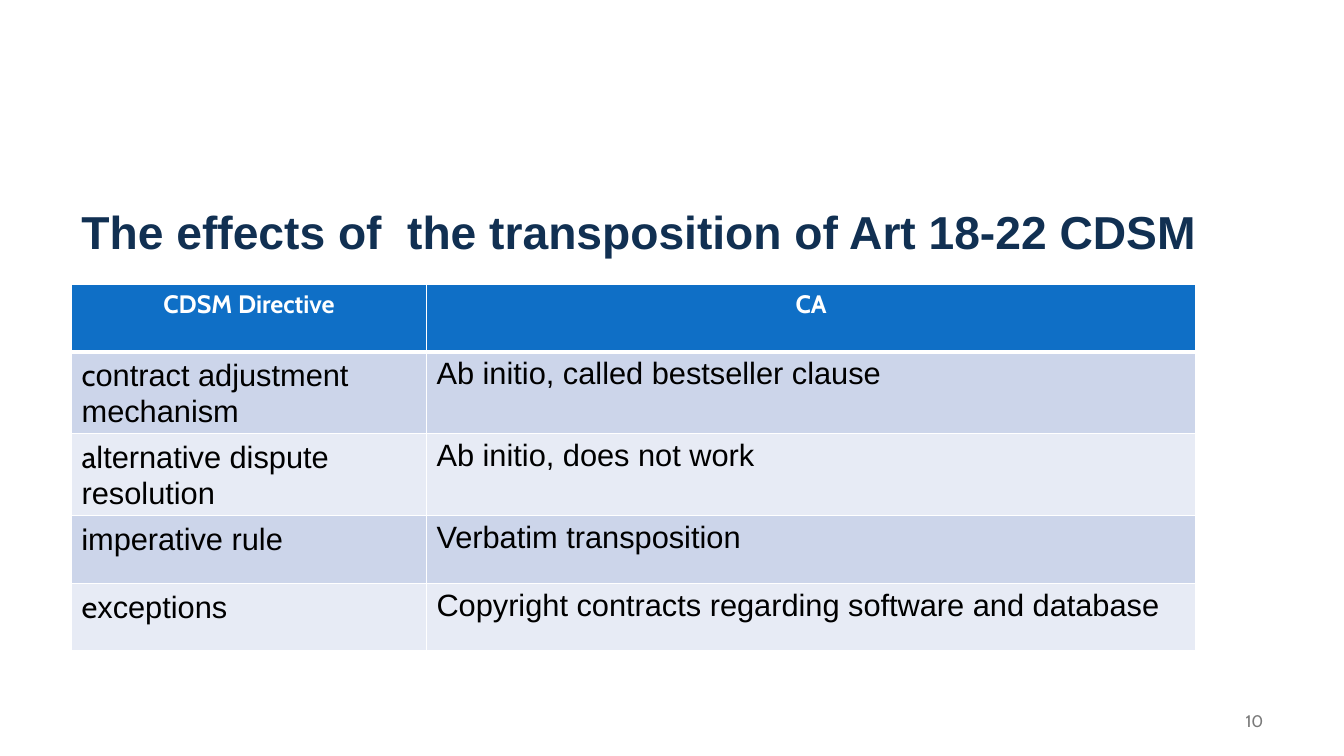
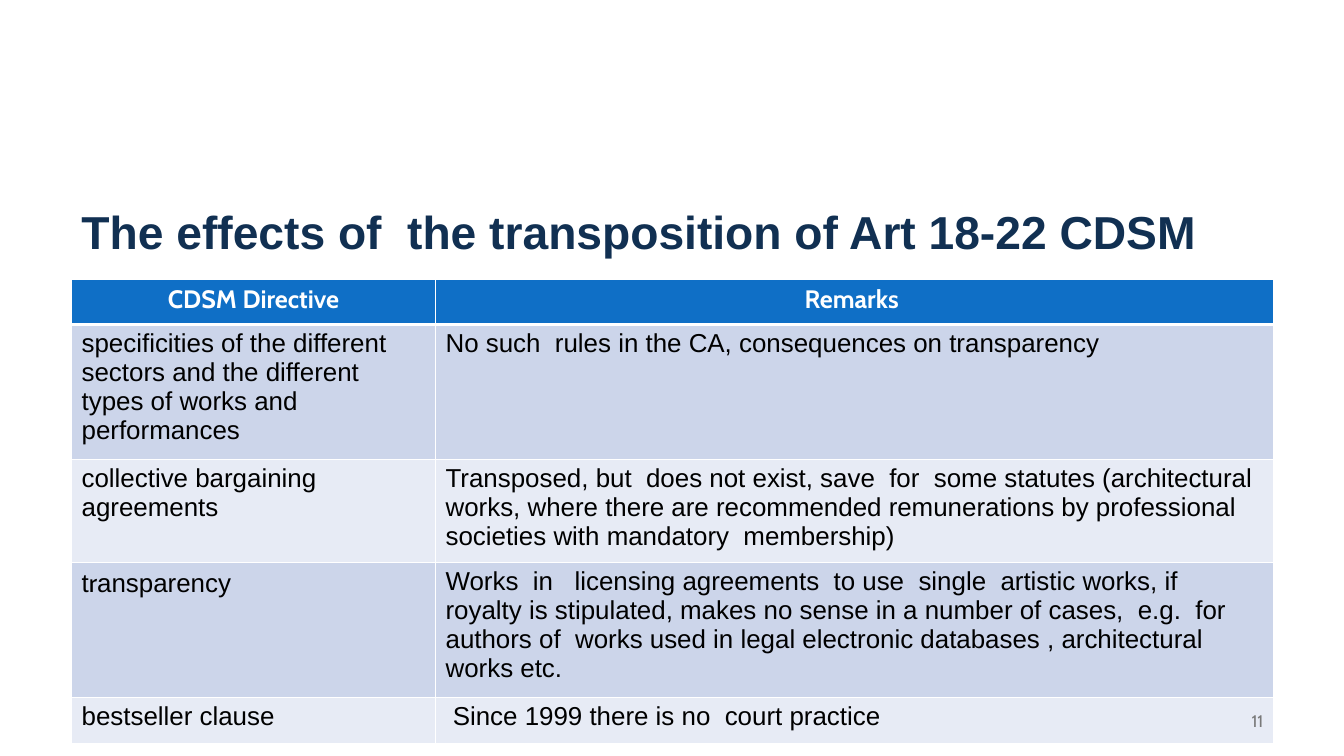
from dataclasses import dataclass

from lxml.etree import SubElement
from pptx import Presentation
from pptx.dml.color import RGBColor
from pptx.enum.text import MSO_ANCHOR, PP_ALIGN
from pptx.oxml.ns import qn
from pptx.util import Inches, Pt

# Shared look
NAVY, BLUE, GREY = "113052", "0F6FC6", "797979"
WHITE, BLACK = "FFFFFF", "000000"
BANDS = ("CCD5EA", "E7EBF5")
BODY_FONT, ACCENT_FONT = "Arial", "Cabin"
LEFT = 0.71
TITLE = "The effects of  the transposition of Art 18-22 CDSM"

TITLE_FORMAT = {"name": BODY_FONT, "size": Pt(33), "bold": True}
HEADER_FORMAT = {"name": ACCENT_FONT, "size": Pt(18), "bold": True}
NUMBER_FORMAT = {"name": ACCENT_FONT, "size": Pt(12), "bold": False}


@dataclass(frozen=True)
class ComparisonSlide:
    number: int
    top: float
    column_widths: tuple[float, ...]
    row_heights: tuple[float, ...]
    body_size: float
    rows: tuple[tuple[str, str], ...]  # text between bars is in the accent font


SLIDES = (
    ComparisonSlide(
        10, 2.82, (3.52, 7.63), (0.67, 0.7, 0.67, 0.67, 0.67), 22,
        (
            ("CDSM Directive", "CA"),
            ("|c|ontract adjustment mechanism",
             "Ab initio, called bestseller clause"),
            ("|a|lternative dispute resolution", "Ab initio, does not work"),
            ("|i|mperative rule", "Verbatim transposition"),
            ("|e|xceptions",
             "Copyright contracts regarding software and database"),
        ),
    ),
    ComparisonSlide(
        11, 2.77, (3.61, 8.31), (0.45, 1.15, 0.8, 1.15, 0.46), 18.5,
        (
            ("CDSM Directive", "Remarks "),
            ("specificities of the different sectors and the different types "
             "of works and performances",
             "No such  rules in the CA, consequences on transparency"),
            ("collective bargaining agreements",
             "Transposed, but  does not exist, save  for  some statutes "
             "(architectural works, where there are recommended remunerations "
             "by professional societies with mandatory  membership)"),
            ("t|r|ansparency",
             "Works  in   licensing agreements  to use  single  artistic works, "
             "if  royalty is stipulated, makes no sense in a number of cases,  "
             "e.g.  for authors of  works used in legal electronic databases , "
             "architectural works etc."),
            ("bestseller clause", " Since 1999 there is no  court practice"),
        ),
    ),
)


def rgb(color: str) -> RGBColor:
    return RGBColor.from_string(color)


def add_run(paragraph, text: str, color: str, font_format: dict) -> None:
    run = paragraph.add_run()
    run.text = text
    for attribute, value in font_format.items():
        setattr(run.font, attribute, value)
    run.font.color.rgb = rgb(color)


def add_label(slide, box: tuple[float, ...], text: str, color: str,
              font_format: dict, paragraph_format: dict) -> None:
    frame = slide.shapes.add_textbox(*map(Inches, box)).text_frame
    frame.word_wrap = True
    frame.vertical_anchor = MSO_ANCHOR.MIDDLE
    paragraph = frame.paragraphs[0]
    for attribute, value in paragraph_format.items():
        setattr(paragraph, attribute, value)
    add_run(paragraph, text, color, font_format)


def set_borders(cell, top: float, bottom: float) -> None:
    properties = cell._tc.get_or_add_tcPr()
    widths = {"a:lnL": 1, "a:lnR": 1, "a:lnT": top, "a:lnB": bottom}
    for position, (tag, width) in enumerate(widths.items()):
        line = SubElement(properties, qn(tag), w=str(Pt(width)))
        SubElement(SubElement(line, qn("a:solidFill")), qn("a:srgbClr"), val=WHITE)
        properties.insert(position, line)


def fill_cell(cell, text: str, row: int, body_size: float) -> None:
    is_header = row == 0
    cell.fill.solid()
    cell.fill.fore_color.rgb = rgb(BLUE if is_header else BANDS[(row - 1) % 2])
    set_borders(cell, top=3 if row == 1 else 1, bottom=3 if is_header else 1)

    paragraph = cell.text_frame.paragraphs[0]
    if is_header:
        paragraph.alignment = PP_ALIGN.CENTER
        add_run(paragraph, text, WHITE, HEADER_FORMAT)
        return
    for index, part in enumerate(text.split("|")):
        if part:
            font = ACCENT_FONT if index % 2 else BODY_FONT
            add_run(paragraph, part, BLACK,
                    {"name": font, "size": Pt(body_size), "bold": False})


def add_comparison(slide, content: ComparisonSlide) -> None:
    widths, heights = content.column_widths, content.row_heights
    table = slide.shapes.add_table(
        len(heights), len(widths), Inches(LEFT), Inches(content.top),
        Inches(sum(widths)), Inches(sum(heights))).table
    table.horz_banding = False
    for column, width in zip(table.columns, widths):
        column.width = Inches(width)
    for row, height in zip(table.rows, heights):
        row.height = Inches(height)
    for row, texts in enumerate(content.rows):
        for column, text in enumerate(texts):
            fill_cell(table.cell(row, column), text, row, content.body_size)


def main() -> None:
    deck = Presentation()
    deck.slide_width, deck.slide_height = Inches(13.33), Inches(7.5)
    for content in SLIDES:
        slide = deck.slides.add_slide(deck.slide_layouts[6])
        add_comparison(slide, content)
        # Title and page number
        add_label(slide, (LEFT, 1.6, 11.92, 1.45), TITLE, NAVY,
                  TITLE_FORMAT, {"line_spacing": 0.9})
        add_label(slide, (9.63, 6.95, 3, 0.4), str(content.number), GREY,
                  NUMBER_FORMAT, {"alignment": PP_ALIGN.RIGHT})
    deck.save("out.pptx")


if __name__ == "__main__":
    main()
